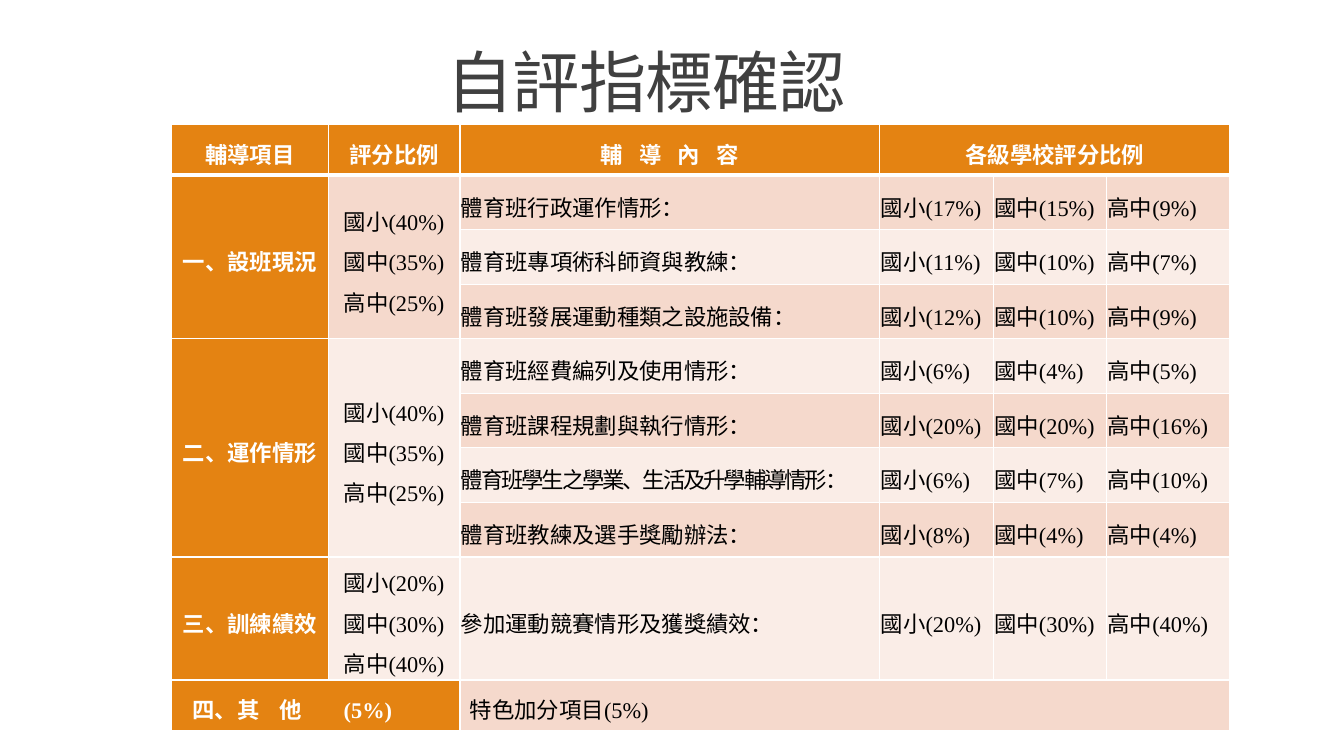
from pptx import Presentation
from pptx.dml.color import RGBColor
from pptx.enum.text import MSO_ANCHOR, PP_ALIGN
from pptx.oxml import parse_xml
from pptx.oxml.ns import nsdecls, qn
from pptx.util import Pt

CJK, LATIN = "Noto Sans CJK SC", "Times New Roman"
ORANGE, DARK_BAND, LIGHT_BAND = "E48312", "F5D9CC", "FAEDE7"
WHITE, BLACK, GREY = "FFFFFF", "000000", "404040"
LEVELS = ["國小", "國中", "高中"]
COL_WIDTHS = [112, 94, 300, 81, 81, 88]
ROW_HEIGHTS = [31] + [39] * 7 + [80, 31]
TIGHT, WIDE = (0.7, 0.7), (7.2, 3.6)

# Section title, weight per level, cell insets, (content, weight per level) rows
SECTIONS = [
    ("一、設班現況", (40, 35, 25), WIDE, [
        ("體育班行政運作情形：", (17, 15, 9)),
        ("體育班專項術科師資與教練：", (11, 10, 7)),
        ("體育班發展運動種類之設施設備：", (12, 10, 9))]),
    ("二、運作情形", (40, 35, 25), WIDE, [
        ("體育班經費編列及使用情形：", (6, 4, 5)),
        ("體育班課程規劃與執行情形：", (20, 20, 16)),
        ("體育班學生之學業、生活及升學輔導情形：", (6, 7, 10)),
        ("體育班教練及選手獎勵辦法：", (8, 4, 4))]),
    ("三、訓練績效", (20, 30, 40), TIGHT, [
        ("參加運動競賽情形及獲獎績效：", (20, 30, 40))]),
]


def color(value):
    return RGBColor.from_string(value)


def write(tf, lines, size=16, font=LATIN, fg=BLACK, bold=False,
          align=PP_ALIGN.JUSTIFY, spacing=1.25, tracking=0):
    for i, line in enumerate(lines):
        p = tf.paragraphs[0] if i == 0 else tf.add_paragraph()
        p.alignment, p.line_spacing = align, spacing
        r = p.add_run()
        r.text = line
        r.font.size, r.font.name, r.font.bold = Pt(size), font, bold
        r.font.color.rgb = color(fg)
        rPr = r.font._element
        rPr.set("spc", str(int(tracking * 100)))
        rPr.find(qn("a:latin")).addnext(
            parse_xml(f'<a:ea {nsdecls("a")} typeface="{CJK}"/>'))


def set_borders(cell, bottom=1):
    tcPr = cell._tc.get_or_add_tcPr()
    for i, (side, width) in enumerate(zip("LRTB", (1, 1, 1, bottom))):
        tcPr.insert(i, parse_xml(
            f'<a:ln{side} {nsdecls("a")} w="{Pt(width)}"><a:solidFill>'
            f'<a:srgbClr val="{WHITE}"/></a:solidFill></a:ln{side}>'))


def set_tabs(p, stops):
    tabs = "".join(f'<a:tab pos="{Pt(stop)}" algn="l"/>' for stop in stops)
    p._p.get_or_add_pPr().append(
        parse_xml(f'<a:tabLst {nsdecls("a")}>{tabs}</a:tabLst>'))


def fill_cell(cell, lines, insets=TIGHT, **fmt):
    cell.vertical_anchor = MSO_ANCHOR.MIDDLE
    cell.margin_left = cell.margin_right = Pt(insets[0])
    cell.margin_top = cell.margin_bottom = Pt(insets[1])
    write(cell.text_frame, lines, **fmt)


def add_title(slide, left, top, width, height):
    title = slide.shapes.title
    title.left, title.top = Pt(left), Pt(top)
    title.width, title.height = Pt(width), Pt(height)
    title.text_frame.vertical_anchor = MSO_ANCHOR.BOTTOM
    write(title.text_frame, ["自評指標確認"], size=48, font=CJK, fg=GREY,
          align=PP_ALIGN.CENTER, spacing=0.85, tracking=-0.5)


def fill_header(table):
    head = dict(fg=WHITE, bold=True, align=PP_ALIGN.CENTER)
    table.cell(0, 3).merge(table.cell(0, 5))
    fill_cell(table.cell(0, 0), ["輔導項目"], **head)
    fill_cell(table.cell(0, 1), ["評分比例"], **head)
    fill_cell(table.cell(0, 2), ["輔 導 內 容"], tracking=4, **head)
    fill_cell(table.cell(0, 3), ["各級學校評分比例"], WIDE, **head)


def fill_section(table, top, name, weights, insets, items):
    bottom = top + len(items) - 1
    if bottom > top:
        for col in (0, 1):
            table.cell(top, col).merge(table.cell(bottom, col))
    fill_cell(table.cell(top, 0), [name], insets, fg=WHITE, bold=True,
              align=PP_ALIGN.CENTER)
    fill_cell(table.cell(top, 1),
              [f"{lv}({w}%)" for lv, w in zip(LEVELS, weights)],
              insets, align=PP_ALIGN.CENTER)
    for row, (content, shares) in enumerate(items, top):
        fill_cell(table.cell(row, 2), [content],
                  tracking=-1.5 if len(content) > 16 else 0)
        for col, (lv, share) in enumerate(zip(LEVELS, shares), 3):
            fill_cell(table.cell(row, col), [f"{lv}({share}%)"])


def fill_other(table, row):
    other = table.cell(row, 0)
    other.merge(table.cell(row, 1))
    table.cell(row, 2).merge(table.cell(row, 5))
    fill_cell(other, ["四、其\t他\t(5%)"], WIDE, fg=WHITE, bold=True,
              align=PP_ALIGN.LEFT)
    other.margin_left = Pt(15)
    set_tabs(other.text_frame.paragraphs[0], [62, 108])
    fill_cell(table.cell(row, 2), ["特色加分項目(5%)"], WIDE)


def add_score_table(slide, left, top):
    rows, cols = len(ROW_HEIGHTS), len(COL_WIDTHS)
    table = slide.shapes.add_table(
        rows, cols, Pt(left), Pt(top),
        Pt(sum(COL_WIDTHS)), Pt(sum(ROW_HEIGHTS))).table
    for column, width in zip(table.columns, COL_WIDTHS):
        column.width = Pt(width)
    for row, height in zip(table.rows, ROW_HEIGHTS):
        row.height = Pt(height)
    for r in range(rows):
        band = DARK_BAND if r % 2 else LIGHT_BAND
        for c in range(cols):
            cell = table.cell(r, c)
            heading = r == 0 or c == 0 or (r == rows - 1 and c == 1)
            cell.fill.solid()
            cell.fill.fore_color.rgb = color(ORANGE if heading else band)
            set_borders(cell, bottom=3 if r == 0 else 1)
    fill_header(table)
    row = 1
    for section in SECTIONS:
        fill_section(table, row, *section)
        row += len(section[-1])
    fill_other(table, row)


def main():
    prs = Presentation()
    prs.slide_width, prs.slide_height = Pt(960), Pt(540)
    slide = prs.slides.add_slide(prs.slide_layouts[5])
    add_title(slide, 178, 16.5, 567, 73.5)
    add_score_table(slide, 122.5, 89)
    prs.save("out.pptx")


if __name__ == "__main__":
    main()
